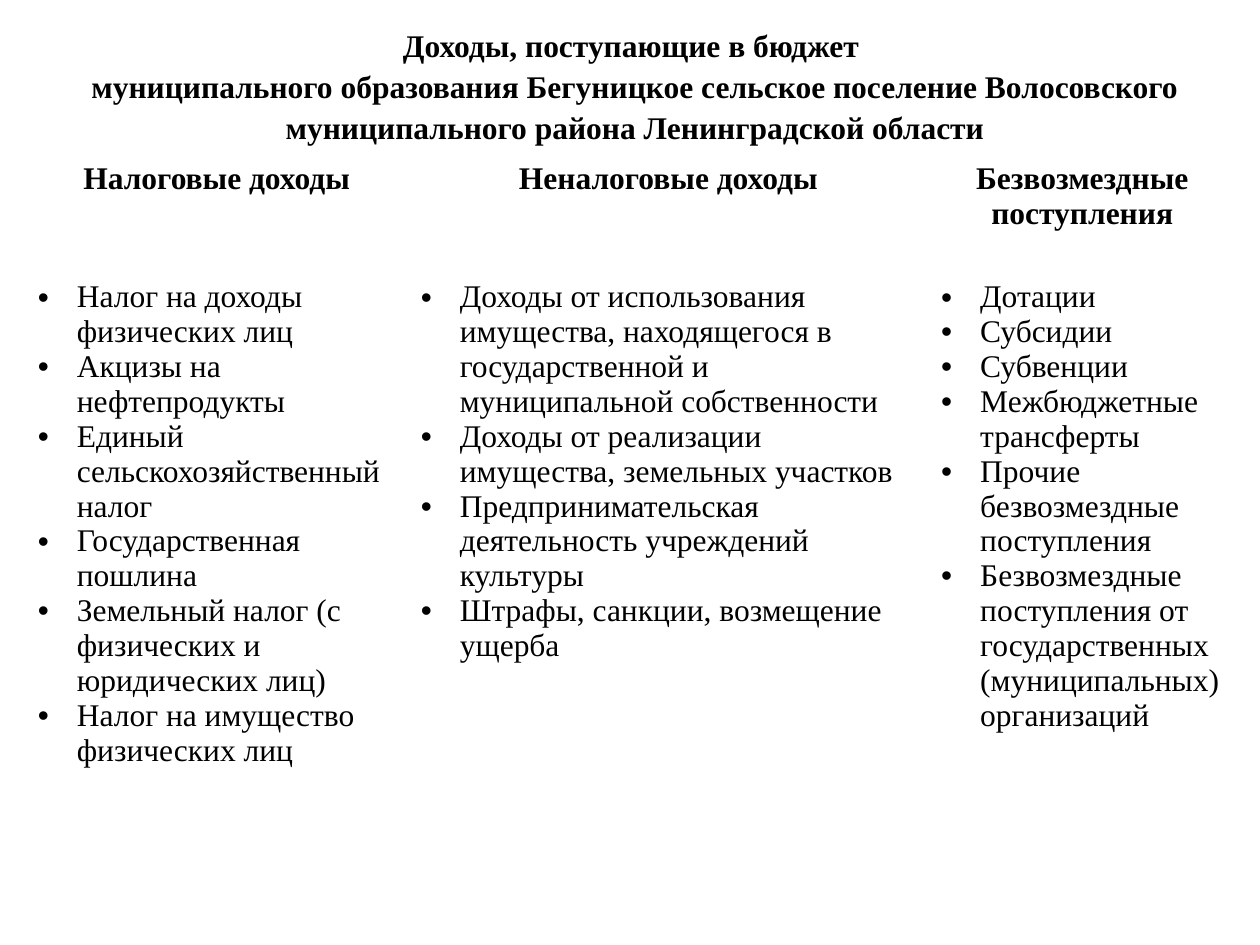
from dataclasses import dataclass
from pptx import Presentation
from pptx.dml.color import RGBColor as Rgb
from pptx.enum.text import PP_ALIGN as Align
from pptx.oxml import parse_xml
from pptx.oxml.ns import nsdecls
from pptx.util import Inches, Pt

TITLE = ("Доходы, поступающие в бюджет \v"
         "муниципального образования Бегуницкое сельское поселение "
         "Волосовского муниципального района Ленинградской области")
INCOME = {
    "Налоговые доходы": [
        "Налог на доходы физических лиц",
        "Акцизы на нефтепродукты",
        "Единый сельскохозяйственный налог",
        "Государственная пошлина",
        "Земельный налог (с физических и юридических лиц)",
        "Налог на имущество физических лиц",
    ],
    "Неналоговые доходы": [
        "Доходы от использования имущества, находящегося в государственной "
        "и муниципальной собственности",
        "Доходы от реализации имущества, земельных участков",
        "Предпринимательская деятельность учреждений культуры",
        "Штрафы, санкции, возмещение ущерба",
    ],
    "Безвозмездные поступления": [
        "Дотации",
        "Субсидии",
        "Субвенции",
        "Межбюджетные трансферты",
        "Прочие безвозмездные поступления",
        "Безвозмездные поступления от государственных (муниципальных) организаций",
    ],
}


@dataclass(frozen=True)
class Theme:
    font: str = "Times New Roman"
    size: int = 18
    ink: str = "000000"
    paper: str = "FFFFFF"
    thin: int = 1
    thick: int = 3
    indent: float = 0.31


def write(frame, lines, theme, bold=False, align=Align.LEFT, bullet=False, space=None):
    frame.word_wrap = True
    for i, line in enumerate(lines):
        para = frame.add_paragraph() if i else frame.paragraphs[0]
        para.text = line
        para.alignment = align
        if space:
            para.line_spacing = space
        for run in para.runs:
            font = run.font
            font.name, font.size, font.bold = theme.font, Pt(theme.size), bold
            font.color.rgb = Rgb.from_string(theme.ink)
        if bullet:
            props = para._p.get_or_add_pPr()
            step = Inches(theme.indent)
            props.set("marL", str(step))
            props.set("indent", str(-step))
            props.append(parse_xml(f'<a:buFont {nsdecls("a")} typeface="Arial"/>'))
            props.append(parse_xml(f'<a:buChar {nsdecls("a")} char="•"/>'))


class Deck:
    """Draws styled elements on one slide, placed by shares of its size."""

    def __init__(self, theme, wide=10, high=7.5):
        self.theme = theme
        self.file = Presentation()
        self.file.slide_width, self.file.slide_height = Inches(wide), Inches(high)
        self.slide = self.file.slides.add_slide(self.file.slide_layouts[6])

    def span(self, x, y, w, h):
        wide, high = self.file.slide_width, self.file.slide_height
        return int(x * wide), int(y * high), int(w * wide), int(h * high)

    def title(self, text, box):
        frame = self.slide.shapes.add_textbox(*self.span(*box)).text_frame
        write(frame, [text], self.theme, bold=True, align=Align.CENTER, space=1.09)

    def edge(self, cell, base):
        props = cell._tc.get_or_add_tcPr()
        for i, side in enumerate(("lnL", "lnR", "lnT", "lnB")):
            width = Pt(base if side == "lnB" else self.theme.thin)
            props.insert(i, parse_xml(
                f'<a:{side} {nsdecls("a")} w="{width}"><a:solidFill>'
                f'<a:srgbClr val="{self.theme.paper}"/></a:solidFill></a:{side}>'))

    def cell(self, cell, lines, base, **form):
        cell.fill.solid()
        cell.fill.fore_color.rgb = Rgb.from_string(self.theme.paper)
        self.edge(cell, base)
        write(cell.text_frame, lines, self.theme, **form)

    def table(self, data, spot, cols, rows):
        box = self.span(*spot, sum(cols), sum(rows))
        grid = self.slide.shapes.add_table(len(rows), len(cols), *box).table
        grid.horz_banding = False
        for row, share in zip(grid.rows, rows):
            row.height = int(share * self.file.slide_height)
        for i, (head, items) in enumerate(data.items()):
            grid.columns[i].width = int(cols[i] * self.file.slide_width)
            self.cell(grid.cell(0, i), [head], self.theme.thick,
                      bold=True, align=Align.CENTER)
            self.cell(grid.cell(1, i), items, self.theme.thin, bullet=True)


def main():
    deck = Deck(Theme())
    deck.table(INCOME, (0.02, 1.23 / 7.5), (0.304, 0.413, 0.244), (0.94 / 7.5, 4.49 / 7.5))
    deck.title(TITLE, (0.051, 0.13 / 7.5, 0.906, 1.01 / 7.5))
    deck.file.save("out.pptx")


if __name__ == "__main__":
    main()
